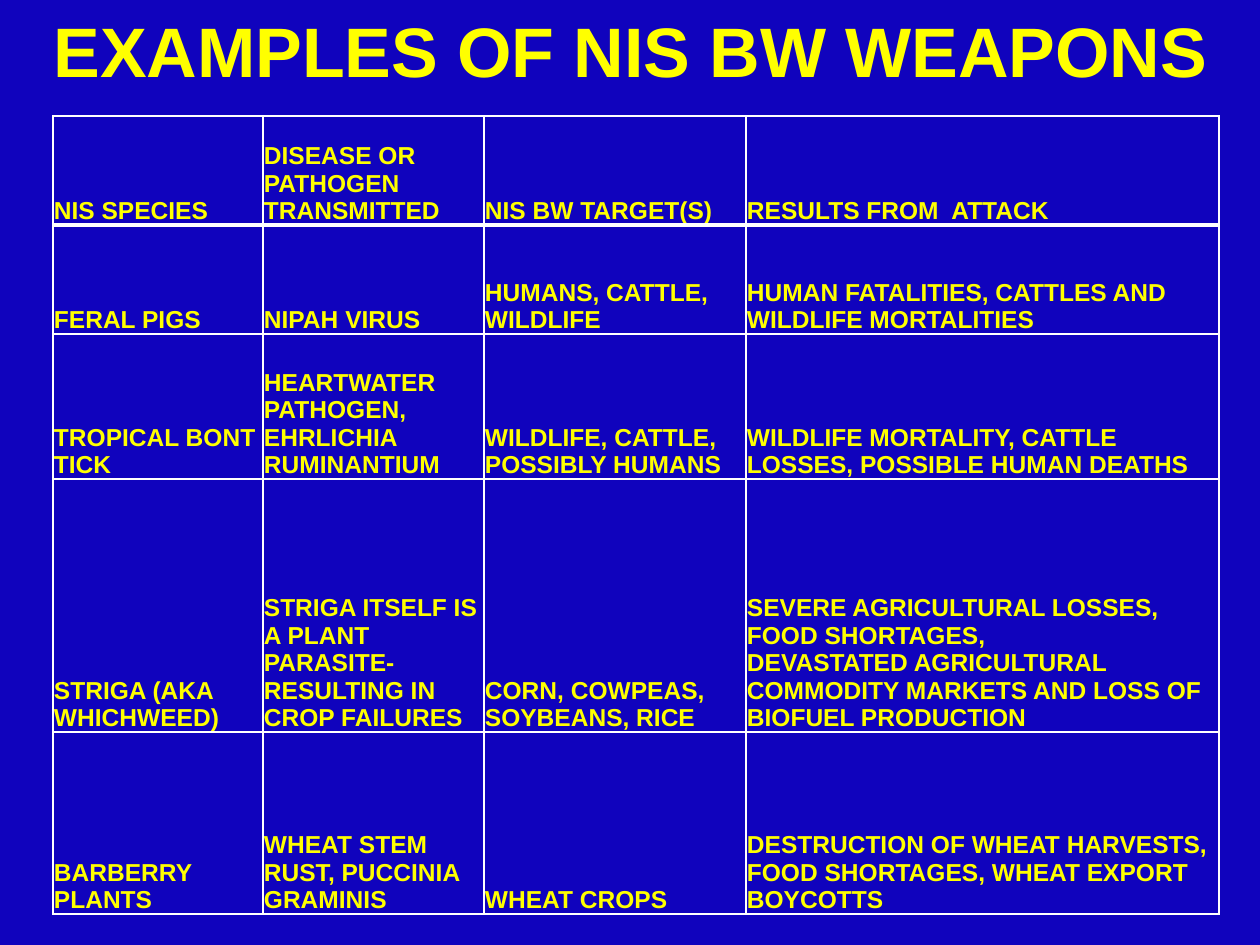
from lxml import etree
from pptx import Presentation
from pptx.dml.color import RGBColor
from pptx.enum import text
from pptx.oxml.ns import qn
from pptx.util import Emu, Pt

TITLE = "EXAMPLES OF NIS BW WEAPONS"
ROWS = [
    ["NIS SPECIES", "DISEASE OR PATHOGEN TRANSMITTED", "NIS BW TARGET(S)",
     "RESULTS FROM  ATTACK"],
    ["FERAL PIGS", "NIPAH VIRUS", "HUMANS, CATTLE, WILDLIFE",
     "HUMAN FATALITIES, CATTLES AND WILDLIFE MORTALITIES"],
    ["TROPICAL BONT TICK", "HEARTWATER PATHOGEN, EHRLICHIA RUMINANTIUM",
     "WILDLIFE, CATTLE, POSSIBLY HUMANS",
     "WILDLIFE MORTALITY, CATTLE LOSSES, POSSIBLE HUMAN DEATHS"],
    ["STRIGA (AKA WHICHWEED)",
     "STRIGA ITSELF IS A PLANT PARASITE-RESULTING IN CROP FAILURES",
     "CORN, COWPEAS, SOYBEANS, RICE",
     "SEVERE AGRICULTURAL LOSSES, FOOD SHORTAGES,\n"
     "DEVASTATED AGRICULTURAL COMMODITY MARKETS AND LOSS OF BIOFUEL PRODUCTION"],
    ["BARBERRY PLANTS", "WHEAT STEM RUST, PUCCINIA GRAMINIS", "WHEAT CROPS",
     "DESTRUCTION OF WHEAT HARVESTS, FOOD SHORTAGES, WHEAT EXPORT BOYCOTTS"],
]
COL_WIDTHS = [210, 221, 262, 473]
ROW_HEIGHTS = [109, 109, 145, 253, 182]
BLUE, YELLOW, WHITE = "1003BD", "FFFF00", "FFFFFF"


def px(n):
    return Emu(round(n * 914400 / 126))


def color(value):
    return RGBColor.from_string(value)


def write(tf, content, size, align=text.PP_ALIGN.LEFT):
    tf.word_wrap = True
    for i, line in enumerate(content.split("\n")):
        p = tf.add_paragraph() if i else tf.paragraphs[0]
        p.alignment = align
        r = p.add_run()
        r.text = line
        r.font.name = "Arial"
        r.font.size = Pt(size)
        r.font.bold = True
        r.font.color.rgb = color(YELLOW)


def set_borders(cell, **widths):
    tc_pr = cell._tc.get_or_add_tcPr()
    for side in "LRTB":
        ln = etree.SubElement(tc_pr, qn(f"a:ln{side}"), w=str(Pt(widths.get(side, 1))))
        fill = etree.SubElement(ln, qn("a:solidFill"))
        etree.SubElement(fill, qn("a:srgbClr"), val=WHITE)


prs = Presentation()
prs.slide_width, prs.slide_height = px(1260), px(945)
s = prs.slides.add_slide(prs.slide_layouts[6])
s.background.fill.solid()
s.background.fill.fore_color.rgb = color(BLUE)

title = s.shapes.add_textbox(px(32), px(-10), px(1197), px(120))
title.text_frame.vertical_anchor = text.MSO_ANCHOR.MIDDLE
write(title.text_frame, TITLE, 40, text.PP_ALIGN.CENTER)

table = s.shapes.add_table(len(ROWS), len(COL_WIDTHS), px(53), px(116),
                           px(sum(COL_WIDTHS)), px(sum(ROW_HEIGHTS))).table
table.first_row = table.horz_banding = False
for column, width in zip(table.columns, COL_WIDTHS):
    column.width = px(width)
for i, (row, height) in enumerate(zip(ROWS, ROW_HEIGHTS)):
    table.rows[i].height = px(height)
    for j, content in enumerate(row):
        cell = table.cell(i, j)
        cell.vertical_anchor = text.MSO_ANCHOR.BOTTOM
        cell.margin_left = cell.margin_right = cell.margin_top = px(1)
        cell.margin_bottom = 0
        set_borders(cell, T=3 if i == 1 else 1, B=3 if i == 0 else 1)
        cell.fill.background()
        write(cell.text_frame, content, 14)

prs.save("out.pptx")
